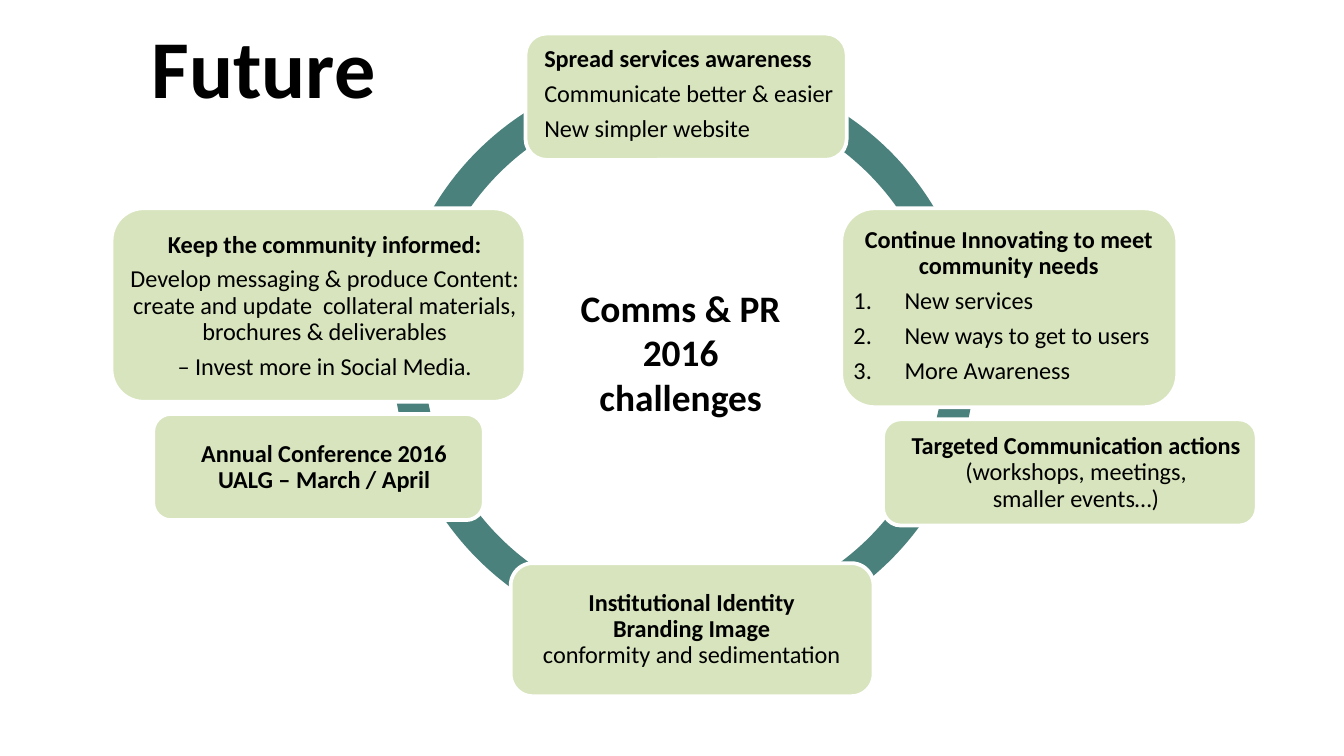
from copy import deepcopy

from lxml import etree
from pptx import Presentation
from pptx.dml.color import RGBColor
from pptx.enum.shapes import MSO_SHAPE
from pptx.enum.text import MSO_ANCHOR, PP_ALIGN
from pptx.oxml.ns import qn
from pptx.util import Inches, Pt

ROUNDED = MSO_SHAPE.ROUNDED_RECTANGLE
RING = MSO_SHAPE.CIRCULAR_ARROW
TOP, MIDDLE = MSO_ANCHOR.TOP, MSO_ANCHOR.MIDDLE
LEFT, CENTER = PP_ALIGN.LEFT, PP_ALIGN.CENTER

COLORS = {"ring": "4B817C", "card": "D7E4BD", "edge": "FFFFFF", "text": "000000"}
FONT = "Calibri"
CELL = Inches(0.1)  # the grid has 100 columns and 56.25 rows
COLUMNS, ROWS = 100, 56.25
CARD_INSET = Inches(0.05)

# Each card: its area, its text area, and paragraphs as
# (text, number of bold lines, alignment, numbered)
CARDS = [
    ((39.1, 2.5, 23.9, 9.4), (40, 1.7, 25, 10.7), [
        ("Spread services awareness", 1, LEFT, False),
        ("Communicate better & easier", 0, LEFT, False),
        ("New simpler website", 0, LEFT, False),
    ]),
    ((62.6, 15.5, 25, 14.8), (63, 15.5, 24.1, 14.5), [
        ("Continue Innovating to meet community needs", 1, CENTER, False),
        ("New services", 0, LEFT, True),
        ("New ways to get to users", 0, LEFT, True),
        ("More Awareness", 0, LEFT, True),
    ]),
    ((65.7, 31.2, 27.8, 7.9), (66.6, 31.6, 26.9, 7.2), [
        ("Targeted Communication actions\v(workshops, meetings,\v"
         "smaller events…)", 1, CENTER, False),
    ]),
    ((38, 41.9, 27, 9.9), (38.5, 42.4, 25.9, 8.9), [
        ("Institutional Identity\vBranding Image\v"
         "conformity and sedimentation", 2, CENTER, False),
    ]),
    ((8.3, 15.5, 30.8, 14.4), (8.3, 16.3, 31.7, 13), [
        ("Keep the community informed:", 1, CENTER, False),
        ("Develop messaging & produce Content:\vcreate and update  collateral "
         "materials, brochures & deliverables", 0, CENTER, False),
        ("– Invest more in Social Media.", 0, CENTER, False),
    ]),
    ((11.4, 30.8, 24.6, 7.9), (12.2, 31.2, 23.8, 7.2), [
        ("Annual Conference 2016\vUALG – March / April", 2, CENTER, False),
    ]),
]


def grid(area):
    return [round(value * CELL) for value in area]


def color(name):
    return RGBColor.from_string(COLORS[name])


def add_text(page, area, anchor):
    box = page.shapes.add_textbox(*grid(area))
    frame = box.text_frame
    frame.word_wrap = True
    frame.vertical_anchor = anchor
    return frame


def style_runs(para, size, bold_lines):
    for index, span in enumerate(para.runs):
        font = span.font
        font.name, font.size = FONT, Pt(size)
        font.bold = index < bold_lines
        font.color.rgb = color("text")
    # Line breaks take the run format, so they keep the line height
    for line_break in para._p.findall(qn("a:br")):
        line_break.append(deepcopy(para.runs[0]._r.rPr))


def number_paragraph(para):
    properties = para._p.get_or_add_pPr()
    properties.set("marL", str(Inches(0.38)))
    properties.set("indent", str(-Inches(0.38)))
    etree.SubElement(properties, qn("a:buFont"), typeface="+mj-lt")
    etree.SubElement(properties, qn("a:buAutoNum"), type="arabicPeriod")


def add_ring(page):
    ring = page.shapes.add_shape(RING, *grid((27.6, 3.3, 46.6, 46.3)))
    ring.rotation = 10.2
    for index, value in enumerate((0.05, 3.13, 138.78, 173.35, 0.06)):
        ring.adjustments[index] = value
    ring.shadow.inherit = False
    ring.fill.solid()
    ring.fill.fore_color.rgb = color("ring")
    ring.line.fill.background()


def add_card(page, area, text_area, paragraphs):
    card = page.shapes.add_shape(ROUNDED, *grid(area))
    card.shadow.inherit = False
    card.fill.solid()
    card.fill.fore_color.rgb = color("card")
    card.line.color.rgb = color("edge")
    card.line.width = Pt(2)

    frame = add_text(page, text_area, MIDDLE)
    frame.margin_left = frame.margin_right = CARD_INSET
    frame.margin_top = frame.margin_bottom = CARD_INSET
    frame.text = "\n".join(text for text, *_ in paragraphs)
    for para, (_, bold_lines, align, numbered) in zip(frame.paragraphs, paragraphs):
        para.alignment = align
        para.line_spacing = 0.9
        para.space_after = Pt(4.6)
        if numbered:
            number_paragraph(para)
        style_runs(para, 13, bold_lines)


def add_heading(page, area, text, size, align, anchor, indent=0.1):
    frame = add_text(page, area, anchor)
    frame.margin_left = Inches(indent)
    frame.text = text
    for para in frame.paragraphs:
        para.alignment = align
        style_runs(para, size, 1)


def main():
    deck = Presentation()
    deck.slide_width, deck.slide_height = grid((COLUMNS, ROWS))
    page = deck.slides.add_slide(deck.slide_layouts[6])

    # Ring with the cards around it
    add_ring(page)
    for area, text_area, paragraphs in CARDS:
        add_card(page, area, text_area, paragraphs)

    # Centre label and title
    add_heading(page, (41.3, 20.7, 18.7, 11.1), "Comms & PR\n2016 challenges",
                20, CENTER, TOP)
    add_heading(page, (3.5, 0.2, 90, 9.4), "Future", 44, LEFT, MIDDLE, indent=0.78)

    deck.save("out.pptx")


if __name__ == "__main__":
    main()
